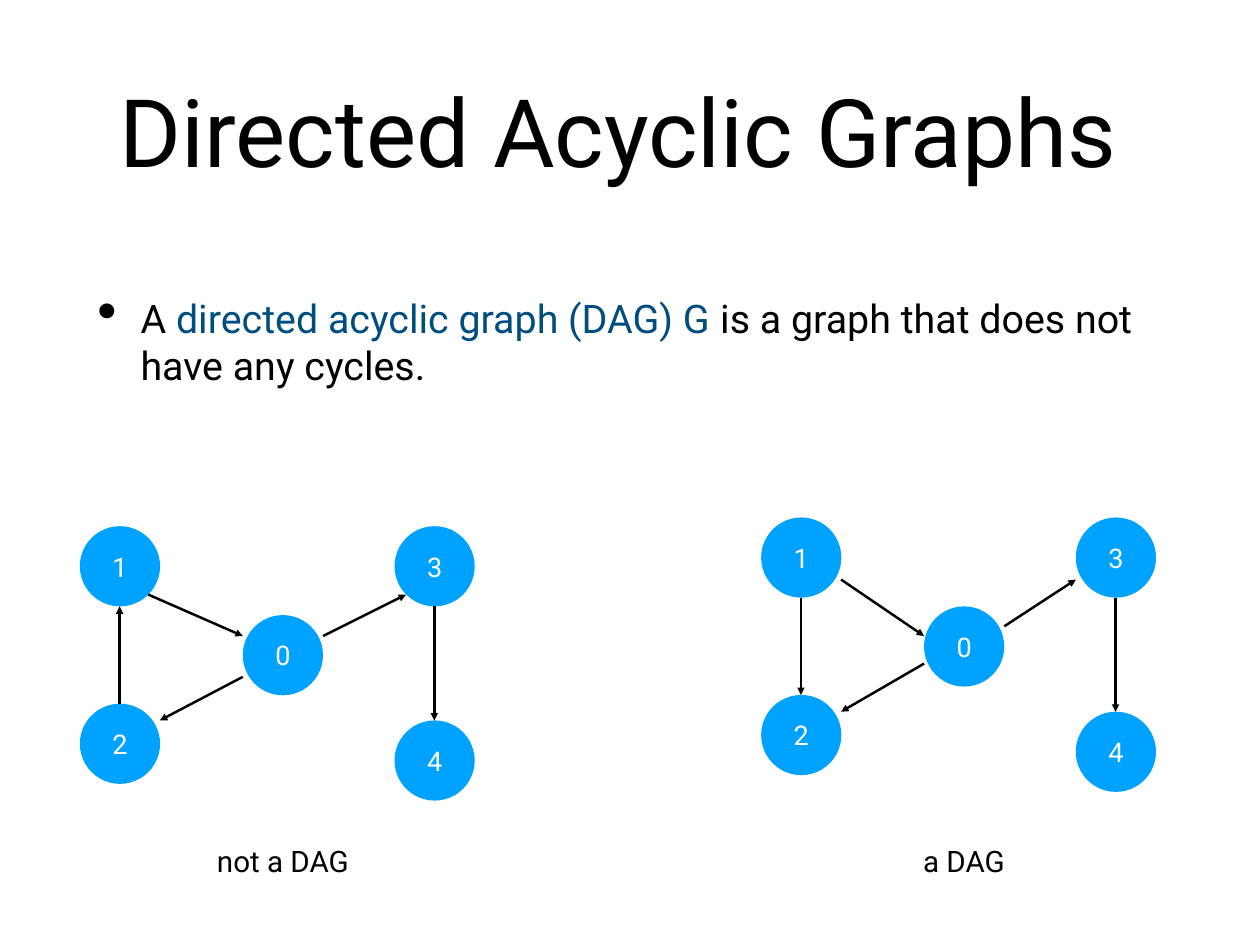
from lxml import etree
from pptx import Presentation
from pptx import util as u
from pptx.dml.color import RGBColor
from pptx.enum import shapes, text
from pptx.oxml.ns import qn

FONT = "Roboto"
COLOURS = {"ink": "000000", "term": "004D80", "node": "00A2FF", "label": "FFFFFF", "page": "FFFFFF"}
INSET = 0.15
NODE_SIZE = 2.3
NODES = {"1": (0, 0), "2": (0, 5.09), "0": (4.67, 2.55), "3": (9.02, 0), "4": (9.02, 5.57)}
DOWN_TO_4 = ((10.16, 2.3), (10.16, 5.57))

TITLE = [("Directed Acyclic Graphs ", "ink")]
DEFINITION = [
    ("A ", "ink"),
    ("directed acyclic graph (DAG) G", "term"),
    (" is a graph that does not have any cycles.", "ink"),
]
GRAPHS = [
    {
        "origin": (2.29, 15.09),
        "caption": ("not a DAG", 5.99, 4.24),
        "arrows": [
            ((1.96, 1.96), (4.67, 3.15)),
            ((1.14, 5.09), (1.14, 2.3)),
            ((4.67, 4.32), (2.29, 5.57)),
            ((6.97, 3.15), (9.35, 1.96)),
            DOWN_TO_4,
        ],
    },
    {
        "origin": (21.82, 14.84),
        "caption": ("a DAG", 26.24, 2.79),
        "arrows": [
            ((2.29, 1.78), (4.67, 3.4)),
            ((1.14, 2.3), (1.14, 5.09)),
            ((4.67, 4.19), (2.29, 5.57)),
            ((6.97, 3.12), (9.02, 1.78)),
            DOWN_TO_4,
        ],
    },
]


def colour(name):
    return RGBColor.from_string(COLOURS[name])


def write(shape, spans, size, align=text.PP_ALIGN.CENTER, wrap=True):
    frame = shape.text_frame
    frame.word_wrap = wrap
    frame.vertical_anchor = text.MSO_ANCHOR.MIDDLE
    frame.margin_left = frame.margin_right = u.Cm(INSET)
    frame.margin_top = frame.margin_bottom = u.Cm(INSET)
    para = frame.paragraphs[0]
    para.alignment = align
    for words, tint in spans:
        span = para.add_run()
        span.text = words
        span.font.name = FONT
        span.font.size = u.Pt(size)
        span.font.color.rgb = colour(tint)
    return para


def add_text(page, place, spans, size, **options):
    box = page.shapes.add_textbox(*map(u.Cm, place))
    return write(box, spans, size, **options)


def add_bullet(para):
    properties = para._p.get_or_add_pPr()
    properties.set("marL", str(u.Cm(1.24)))
    properties.set("indent", str(-u.Cm(1.24)))
    etree.SubElement(properties, qn("a:buSzPct")).set("val", "145000")
    etree.SubElement(properties, qn("a:buChar")).set("char", "•")


def add_node(page, label, left, top):
    node = page.shapes.add_shape(
        shapes.MSO_SHAPE.OVAL, u.Cm(left), u.Cm(top), u.Cm(NODE_SIZE), u.Cm(NODE_SIZE))
    node.shadow.inherit = False
    node.fill.solid()
    node.fill.fore_color.rgb = colour("node")
    node.line.fill.background()
    write(node, [(label, "label")], 22)


def add_arrow(page, start, end):
    arrow = page.shapes.add_connector(
        shapes.MSO_CONNECTOR.STRAIGHT, *map(u.Cm, start + end))
    arrow.line.color.rgb = colour("ink")
    arrow.line.width = u.Pt(2)
    etree.SubElement(arrow.line._get_or_add_ln(), qn("a:tailEnd")).set("type", "triangle")
    etree.SubElement(arrow._element.spPr, qn("a:effectLst"))


def add_graph(page, graph):
    left, top = graph["origin"]
    for label, (across, down) in NODES.items():
        add_node(page, label, left + across, top + down)
    for ends in graph["arrows"]:
        start, end = [(left + across, top + down) for across, down in ends]
        add_arrow(page, start, end)
    words, caption_left, width = graph["caption"]
    add_text(page, (caption_left, 24.05, width, 1.27), [(words, "ink")], 24, wrap=False)


def main():
    """Build the slide on directed acyclic graphs."""
    deck = Presentation()
    deck.slide_width, deck.slide_height = u.Cm(36.12), u.Cm(27.1)
    page = deck.slides.add_slide(deck.slide_layouts[6])
    page.background.fill.solid()
    page.background.fill.fore_color.rgb = colour("page")
    add_text(page, (2.64, 0.71, 30.84, 6), TITLE, 76.8)
    definition = add_text(
        page, (2.64, 7.19, 30.84, 5.21), DEFINITION, 32, align=text.PP_ALIGN.LEFT)
    add_bullet(definition)
    for graph in GRAPHS:
        add_graph(page, graph)
    deck.save("out.pptx")


if __name__ == "__main__":
    main()
